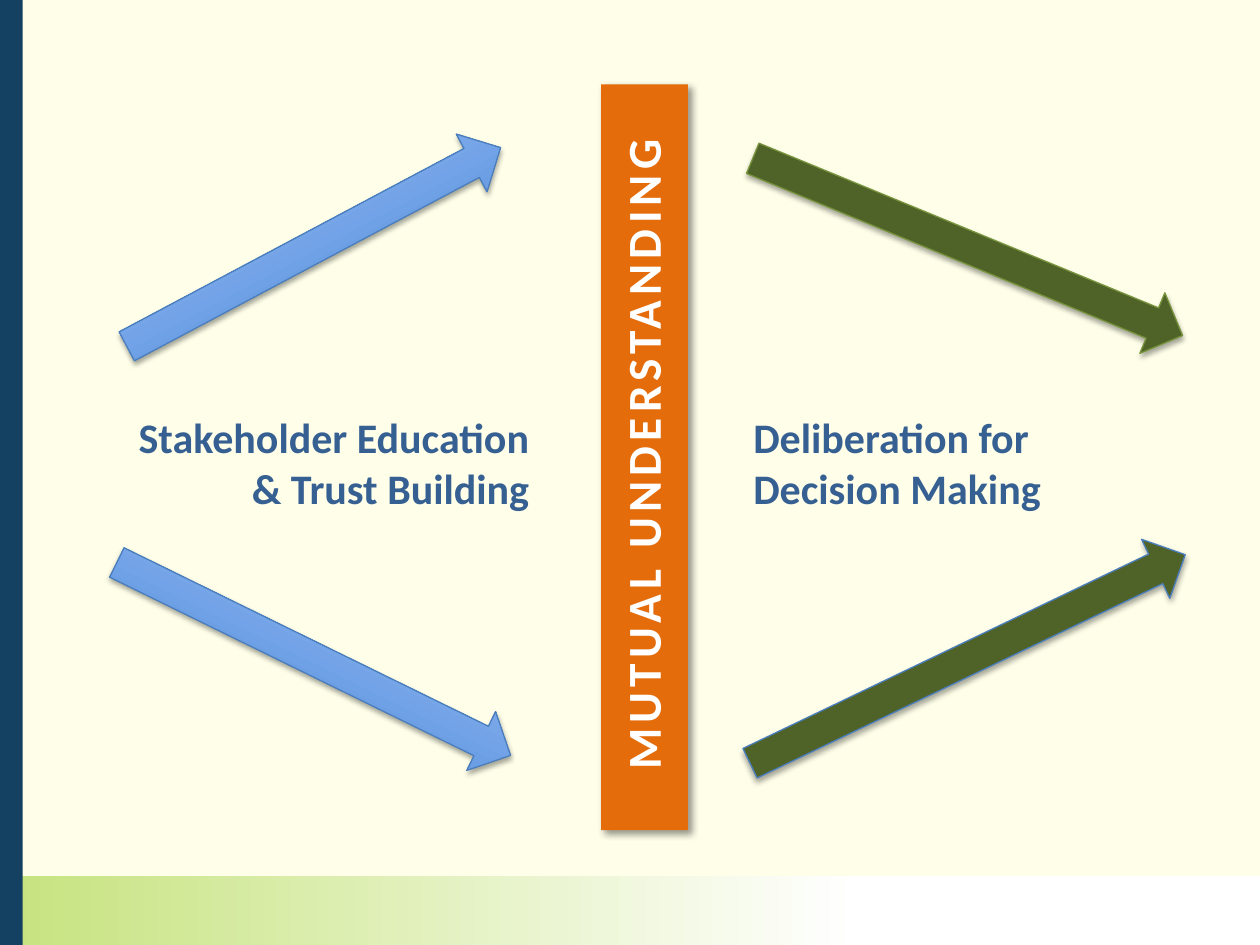
from lxml import etree
from pptx import Presentation
from pptx import util as u
from pptx.dml.color import RGBColor
from pptx.enum import shapes, text
from pptx.oxml.ns import qn

FONT = "Calibri"
ARROW_H = 6.93
LABEL_H = 12.13
BAR_SHADOW = (4, 3, 45, 40)
ARROW_SHADOW = (3.1, 1.8, 90, 35)

prs = Presentation()
prs.slide_width, prs.slide_height = u.Inches(10), u.Inches(7.5)
COL, ROW = prs.slide_width / 100, prs.slide_height / 100


def rgb(value):
    return RGBColor.from_string(value)


def place(box):
    x, y, w, h = box
    return [u.Emu(round(n)) for n in (x * COL, y * ROW, w * COL, h * ROW)]


def paint(fill, colours, end=1, angle=0):
    if len(colours) == 1:
        fill.solid()
        fill.fore_color.rgb = rgb(colours[0])
        return
    fill.gradient()
    fill.gradient_angle = angle
    for stop, colour, position in zip(fill.gradient_stops, colours, (0, end)):
        stop.color.rgb = rgb(colour)
        stop.position = position


def add_shadow(sp, blur, distance, direction, alpha):
    effects = sp._element.spPr.find(qn("a:effectLst"))
    shadow = etree.SubElement(
        effects, qn("a:outerShdw"), blurRad=str(u.Pt(blur)),
        dist=str(u.Pt(distance)), dir=str(direction * 60000), rotWithShape="0")
    colour = etree.SubElement(shadow, qn("a:srgbClr"), val="000000")
    etree.SubElement(colour, qn("a:alpha"), val=str(alpha * 1000))


def add_block(s, box, colours, kind=shapes.MSO_SHAPE.RECTANGLE, line=None,
              shadow=None, **gradient):
    sp = s.shapes.add_shape(kind, *place(box))
    sp.shadow.inherit = False
    paint(sp.fill, colours, **gradient)
    if line:
        sp.line.color.rgb = rgb(line)
        sp.line.width = u.Pt(0.75)
    else:
        sp.line.fill.background()
    if shadow:
        add_shadow(sp, *shadow)
    return sp


def add_run(p, words, size, colour):
    r = p.add_run()
    r.text = words
    r.font.name, r.font.size, r.font.bold = FONT, u.Pt(size), True
    r.font.color.rgb = rgb(colour)
    return r


def add_label(s, box, align):
    tb = s.shapes.add_textbox(*place(box))
    tf = tb.text_frame
    tf.word_wrap = False
    tf.auto_size = text.MSO_AUTO_SIZE.SHAPE_TO_FIT_TEXT
    tf.paragraphs[0].alignment = align
    return tb


def add_frame(s):
    paint(s.background.fill, ["FEFEE9"])
    add_block(s, (0, 92.67, 100, 7.33), ["C6E37E", "FFFFFF"], end=0.68)
    add_block(s, (0, 0, 1.8, 100), ["144161"])


def add_divider(s, box, words):
    add_block(s, box, ["E46C0A"], shadow=BAR_SHADOW)
    x, y, w, h = box
    length, height = 53, 7.47
    tb = add_label(s, (x + w / 2 - length / 2 - 0.15, y + h / 2 - height / 2 + 0.4,
                       length, height), text.PP_ALIGN.RIGHT)
    tb.rotation = 270
    r = add_run(tb.text_frame.paragraphs[0], words, 27, "FFFFFF")
    r.font._element.set("spc", "300")


def add_side(s, box, lines, align, label_inset, label_w, colours, arrows):
    x, y, w, h = box
    for top, (width, angle, line) in zip((y, y + h - ARROW_H), arrows):
        sp = add_block(s, (x + (w - width) / 2, top, width, ARROW_H), colours,
                       shapes.MSO_SHAPE.RIGHT_ARROW, line, ARROW_SHADOW, angle=90)
        sp.rotation = angle
    tb = add_label(s, (x + label_inset, y + 20.26, label_w, LABEL_H), align)
    p = tb.text_frame.paragraphs[0]
    for i, words in enumerate(lines):
        if i:
            p.add_line_break()
        add_run(p, words, 24, "376092")


s = prs.slides.add_slide(prs.slide_layouts[6])
add_frame(s)
add_divider(s, (47.7, 8.93, 6.9, 78.93), "MUTUAL UNDERSTANDING")
add_side(s, (7.5, 22.67, 34.8, 50.53),
         ["Stakeholder Education", "& Trust Building"], text.PP_ALIGN.RIGHT,
         1.9, 33.6, ["3F80CE", "A4C4FF"],
         [(33.6, 332, "4B7EBC"), (34.8, 26.1, "4B7EBC")])
add_side(s, (57.65, 22.67, 38.3, 50.53),
         ["Deliberation for", "Decision Making"], text.PP_ALIGN.LEFT,
         1.15, 25.1, ["4F6228"],
         [(36.9, 22.4, "77933C"), (38.3, 334.4, "4B7EBC")])
prs.save("out.pptx")
